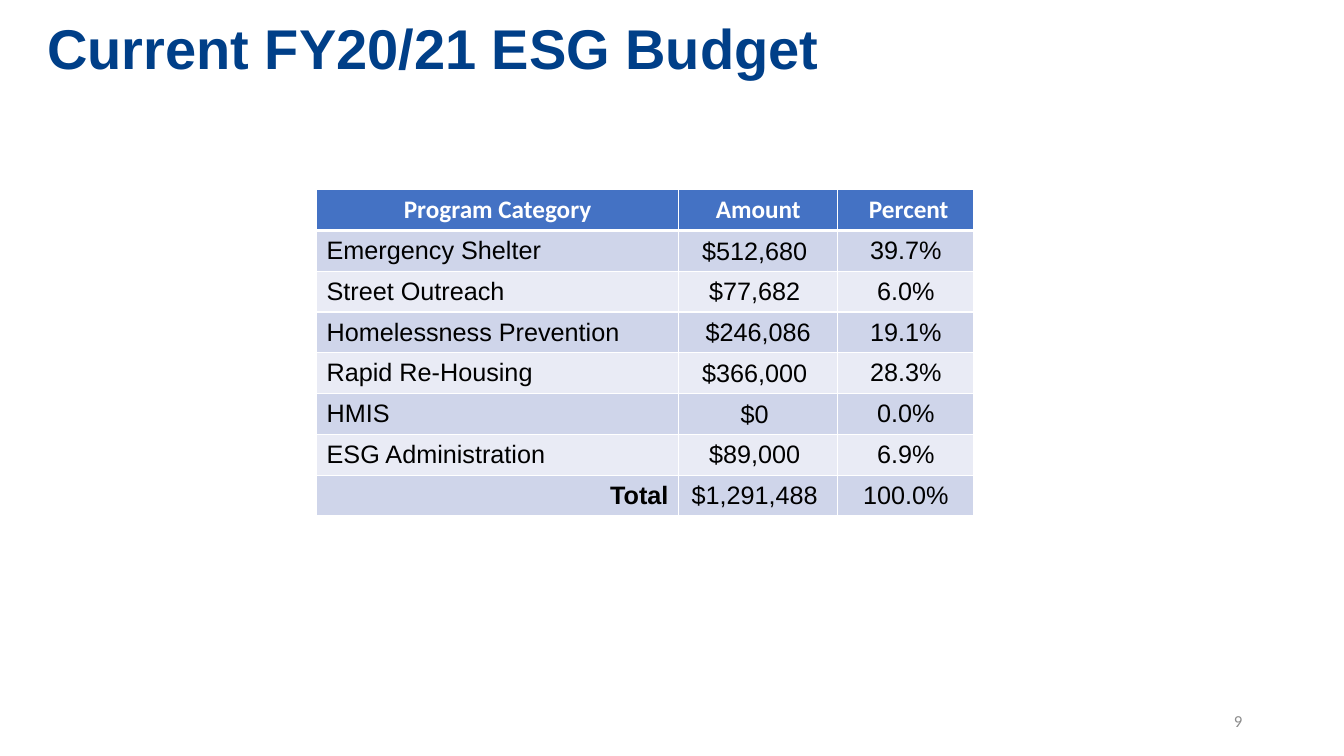
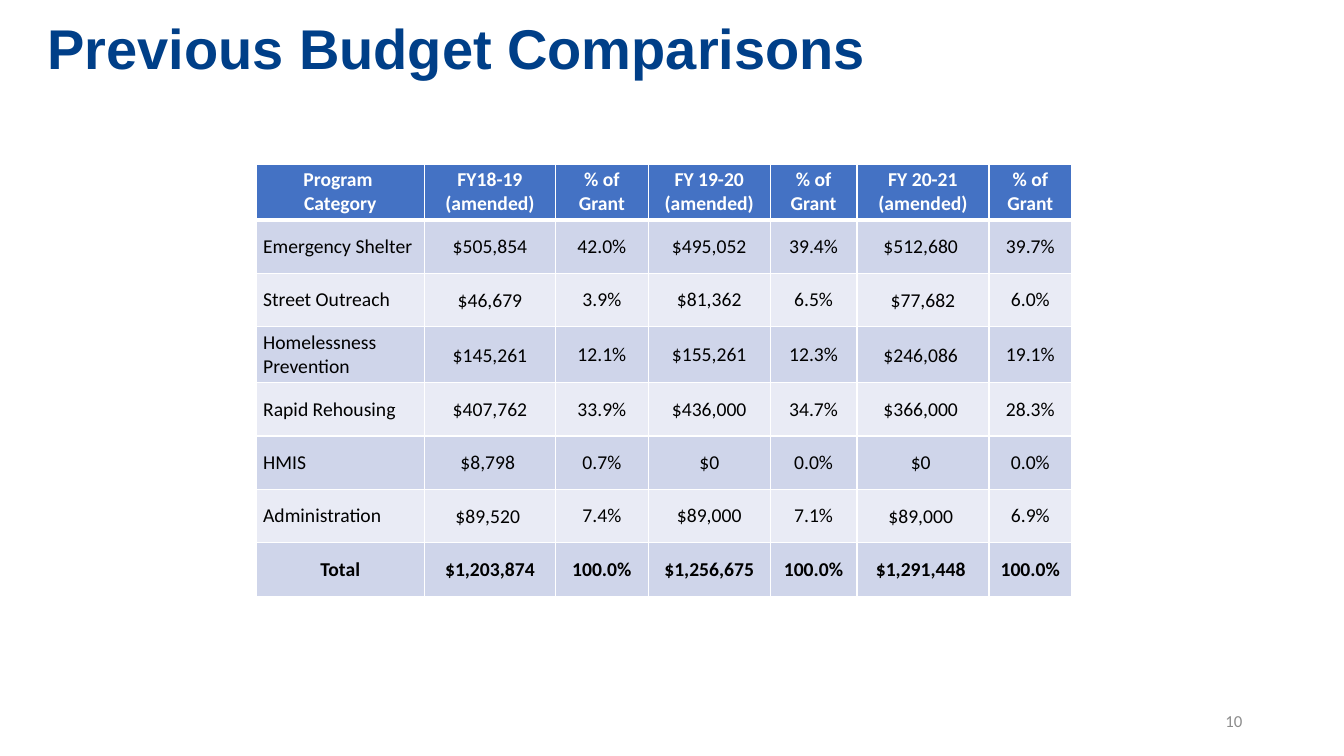
from lxml import etree
from pptx import Presentation
from pptx.dml.color import RGBColor
from pptx.enum.text import MSO_ANCHOR, MSO_AUTO_SIZE, PP_ALIGN
from pptx.oxml.ns import qn
from pptx.util import Inches, Pt

LEFT, CENTER, RIGHT = PP_ALIGN.LEFT, PP_ALIGN.CENTER, PP_ALIGN.RIGHT
TOP, MIDDLE = MSO_ANCHOR.TOP, MSO_ANCHOR.MIDDLE
TITLE_ONLY = 5

# Shared look
SLIDE_W, SLIDE_H = 13.33, 7.5
WHITE, BLACK = "FFFFFF", "000000"
HEADER_FILL, BANDS = "4472C4", ("CFD5EA", "E9EBF5")
TITLE_BOX = (0.37, 0.08, 12.69, 0.77)
NUMBER_BOX = (9.42, 6.95, 3, 0.4)
TITLE_FONT = dict(name="Arial", size=Pt(40), bold=True, color="003F88")
NUMBER_FONT = dict(name="Calibri", size=Pt(12), bold=False, color="8C8C8C")
CELL_INSETS = (0.07, 0.04, 0.07, 0.04)
TIGHT_INSETS = (0.01, 0.01, 0.01, 0)
WIDE_INSETS = (0.1, 0.05, 0.1, 0.05)
RULE, HEADER_RULE = 1, 3

# Content: the first row is the header, the last row the total
CURRENT_BUDGET = dict(
    corner=(3.14, 1.88),
    columns=(3.59, 1.58, 1.35),
    heights=[0.405] * 8,
    tight_columns=(1,),
    label_insets=WIDE_INSETS,
    size=18,
    body_font="Arial",
    total_align=RIGHT,
    bold_total_columns=(0,),
    rows=[
        ("Program Category", "Amount", " Percent"),
        ("Emergency Shelter", "$512,680 ", "39.7%"),
        ("Street Outreach", "$77,682 ", "6.0%"),
        ("Homelessness Prevention", "$246,086", "19.1%"),
        ("Rapid Re-Housing", "$366,000 ", "28.3%"),
        ("HMIS", "$0 ", "0.0%"),
        ("ESG Administration", "$89,000 ", "6.9%"),
        ("Total", "$1,291,488 ", "100.0%"),
    ],
)
BUDGET_COMPARISON = dict(
    corner=(2.54, 1.63),
    columns=(1.67, 1.3, 0.92, 1.21, 0.86, 1.31, 0.82),
    heights=[0.55] + [0.53] * 7,
    tight_columns=(1, 5),
    label_insets=CELL_INSETS,
    size=14,
    body_font="Calibri",
    total_align=CENTER,
    bold_total_columns=range(7),
    rows=[
        ("Program \nCategory", "FY18-19\n(amended)", "% of Grant",
         "FY 19-20\n(amended)", "% of Grant", "FY 20-21\n(amended)", "% of Grant"),
        ("Emergency Shelter", "$505,854", "42.0%", "$495,052", "39.4%", "$512,680 ", "39.7%"),
        ("Street Outreach", "$46,679", "3.9%", "$81,362", "6.5%", "$77,682", "6.0%"),
        ("Homelessness Prevention", "$145,261", "12.1%", "$155,261", "12.3%",
         "$246,086 ", "19.1%"),
        ("Rapid Rehousing", "$407,762", "33.9%", "$436,000", "34.7%", "$366,000 ", "28.3%"),
        ("HMIS", "$8,798 ", "0.7%", "$0", "0.0%", "$0 ", "0.0%"),
        ("Administration", "$89,520 ", "7.4%", "$89,000", "7.1%", "$89,000 ", "6.9%"),
        ("Total", "$1,203,874", "100.0%", "$1,256,675", "100.0%", "$1,291,448 ", "100.0%"),
    ],
)


def rgb(color):
    return RGBColor.from_string(color)


def write(frame, text, font, align):
    """Fill a text frame, one paragraph for each line."""
    frame.text = text
    for paragraph in frame.paragraphs:
        paragraph.alignment = align
        for run in paragraph.runs:
            for key, value in font.items():
                if key == "color":
                    run.font.color.rgb = rgb(value)
                else:
                    setattr(run.font, key, value)


def set_insets(holder, insets):
    for side, inset in zip(("left", "top", "right", "bottom"), insets):
        setattr(holder, f"margin_{side}", Inches(inset))


def place_text(shape, box, text, font, align, anchor):
    shape.left, shape.top, shape.width, shape.height = map(Inches, box)
    frame = shape.text_frame
    frame.word_wrap = True
    frame.auto_size = MSO_AUTO_SIZE.NONE
    frame.vertical_anchor = anchor
    set_insets(frame, WIDE_INSETS)
    write(frame, text, font, align)


def rule_cell(cell, top, bottom):
    """Draw white lines round a cell; call this before setting its fill."""
    properties = cell._tc.get_or_add_tcPr()
    for side, points in (("L", RULE), ("R", RULE), ("T", top), ("B", bottom)):
        line = etree.SubElement(properties, qn(f"a:ln{side}"), w=str(Pt(points)))
        fill = etree.SubElement(line, qn("a:solidFill"))
        etree.SubElement(fill, qn("a:srgbClr"), val=WHITE)


def budget_table(slide, budget):
    rows, columns, heights = budget["rows"], budget["columns"], budget["heights"]
    box = (*budget["corner"], sum(columns), sum(heights))
    table = slide.shapes.add_table(len(rows), len(columns), *map(Inches, box)).table
    for column, width in zip(table.columns, columns):
        column.width = Inches(width)
    for row, height in zip(table.rows, heights):
        row.height = Inches(height)

    last = len(rows) - 1
    for r, values in enumerate(rows):
        header, total = r == 0, r == last
        for c, value in enumerate(values):
            cell = table.cell(r, c)
            # Lines and fill
            rule_cell(cell, HEADER_RULE if r == 1 else RULE, HEADER_RULE if header else RULE)
            cell.fill.solid()
            cell.fill.fore_color.rgb = rgb(HEADER_FILL if header else BANDS[(r - 1) % 2])
            # Text placement
            cell.vertical_anchor = MIDDLE
            if c == 0:
                insets = budget["label_insets"]
            elif c in budget["tight_columns"] and not header:
                insets = TIGHT_INSETS
            else:
                insets = CELL_INSETS
            set_insets(cell, insets)
            align = CENTER
            if c == 0 and not header:
                align = budget["total_align"] if total else LEFT
            # Text
            font = dict(
                name="Calibri" if header else budget["body_font"],
                size=Pt(budget["size"]),
                bold=header or (total and c in budget["bold_total_columns"]),
                color=WHITE if header else BLACK,
            )
            write(cell.text_frame, value, font, align)


def budget_slide(prs, title, number, budget):
    slide = prs.slides.add_slide(prs.slide_layouts[TITLE_ONLY])
    place_text(slide.shapes.title, TITLE_BOX, title, TITLE_FONT, LEFT, TOP)
    budget_table(slide, budget)
    page_number = slide.shapes.add_textbox(*map(Inches, NUMBER_BOX))
    place_text(page_number, NUMBER_BOX, str(number), NUMBER_FONT, RIGHT, MIDDLE)


def main():
    prs = Presentation()
    prs.slide_width, prs.slide_height = Inches(SLIDE_W), Inches(SLIDE_H)
    budget_slide(prs, "Current FY20/21 ESG Budget", 9, CURRENT_BUDGET)
    budget_slide(prs, "Previous Budget Comparisons", 10, BUDGET_COMPARISON)
    prs.save("out.pptx")


if __name__ == "__main__":
    main()
